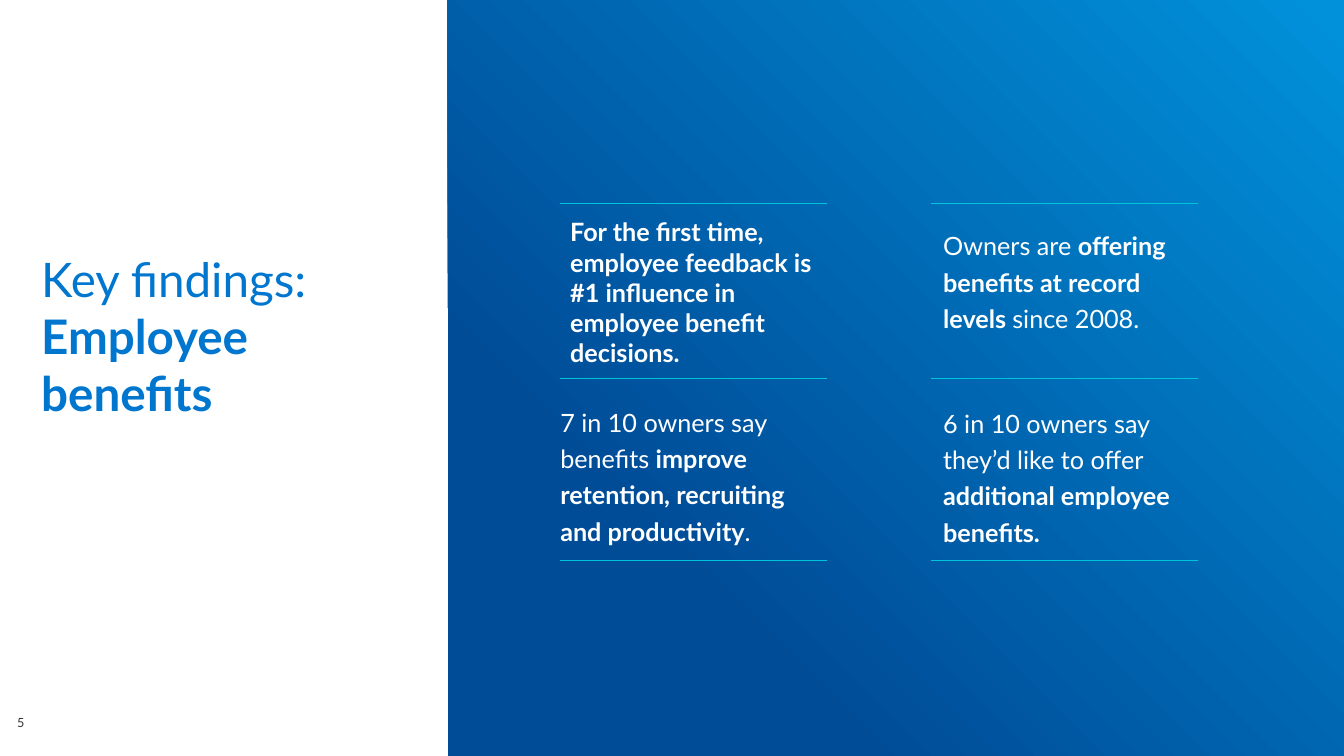
from dataclasses import dataclass

from lxml import etree
from pptx import Presentation
from pptx import util as u
from pptx.dml.color import RGBColor
from pptx.enum import shapes, text
from pptx.oxml import ns


@dataclass(frozen=True)
class Theme:
    font: str = "Lato"
    title: str = "0076CF"
    body: str = "FFFFFF"
    number: str = "333333"
    rule: str = "00C4D9"
    gradient: tuple = ((0.25, "004C97"), (0.99, "0091DA"))
    title_size: int = 34
    body_size: int = 18
    number_size: int = 9
    rule_width: float = 0.75


class Deck:
    def __init__(self, theme, width, height):
        self.theme = theme
        self.prs = Presentation()
        self.prs.slide_width, self.prs.slide_height = u.Cm(width), u.Cm(height)
        self.s = self.prs.slides.add_slide(self.prs.slide_layouts[6])

    def panel(self, *box):
        sp = self.s.shapes.add_shape(shapes.MSO_SHAPE.RECTANGLE, *map(u.Cm, box))
        sp.shadow.inherit = False
        sp.line.fill.background()
        sp.fill.gradient()
        sp.fill.gradient_angle = 45
        for stop, (position, color) in zip(sp.fill.gradient_stops, self.theme.gradient):
            stop.position = position
            stop.color.rgb = RGBColor.from_string(color)

    def rule(self, x, y, width):
        line = self.s.shapes.add_connector(
            shapes.MSO_CONNECTOR.STRAIGHT, *map(u.Cm, (x, y, x + width, y)))
        line.line.color.rgb = RGBColor.from_string(self.theme.rule)
        line.line.width = u.Pt(self.theme.rule_width)
        etree.SubElement(line.element.spPr, ns.qn("a:effectLst"))

    def text(self, box, runs, size, color, spacing=1.0, inset=(0, 0),
             anchor=text.MSO_ANCHOR.TOP):
        """Add one paragraph; runs are (words, bold) pairs, inset is (sides, ends) in cm."""
        tf = self.s.shapes.add_textbox(*map(u.Cm, box)).text_frame
        sides, ends = map(u.Cm, inset)
        frame = {"word_wrap": True, "vertical_anchor": anchor,
                 "margin_left": sides, "margin_right": sides,
                 "margin_top": ends, "margin_bottom": ends}
        for name, value in frame.items():
            setattr(tf, name, value)
        p = tf.paragraphs[0]
        p.line_spacing = spacing
        for words, bold in runs:
            for i, part in enumerate(words.split("\n")):
                if i:
                    p.add_line_break()
                r = p.add_run()
                r.text = part
                for name, value in {"name": self.theme.font, "size": u.Pt(size),
                                    "bold": bold}.items():
                    setattr(r.font, name, value)
                r.font.color.rgb = RGBColor.from_string(color)


RULE_COLUMNS = (14.12, 23.47)
RULE_ROWS = (5.13, 9.53, 14.12)
RULE_LENGTH = 6.73

FINDINGS = (
    ((14.12, 10.11, 6.73, 3.68),
     (("7 in 10 owners say benefits ", False),
      ("improve retention, recruiting and productivity", True), (".", False))),
    ((23.77, 10.13, 6.73, 3.4),
     (("6 in 10 owners say they’d like to offer ", False),
      ("additional employee benefits.", True))),
    ((23.77, 5.66, 6.2, 2.59),
     (("Owners are ", False), ("offering benefits at record levels ", True),
      ("since 2008.", False))),
)
LEAD_FINDING = ("For the first time, employee feedback is #1 influence in "
                "employee benefit decisions.")


def main():
    theme = Theme()
    deck = Deck(theme, 33.87, 19.05)
    deck.panel(11.28, 0, 22.59, 19.05)
    deck.text((1.04, 6.3, 9.88, 6.45),
              (("Key findings: ", False), ("Employee\nbenefits", True)),
              theme.title_size, theme.title)
    deck.text((0.43, 17.35, 1.17, 1.04), (("5", False),),
              theme.number_size, theme.number, anchor=text.MSO_ANCHOR.BOTTOM)
    for box, runs in FINDINGS:
        deck.text(box, runs, theme.body_size, theme.body, spacing=1.2)
    for y in RULE_ROWS:
        for x in RULE_COLUMNS:
            deck.rule(x, y, RULE_LENGTH)
    deck.text((14.12, 5.33, 6.81, 4.11), ((LEAD_FINDING, True),),
              theme.body_size, theme.body, inset=(0.25, 0.13))
    deck.prs.save("out.pptx")


if __name__ == "__main__":
    main()
